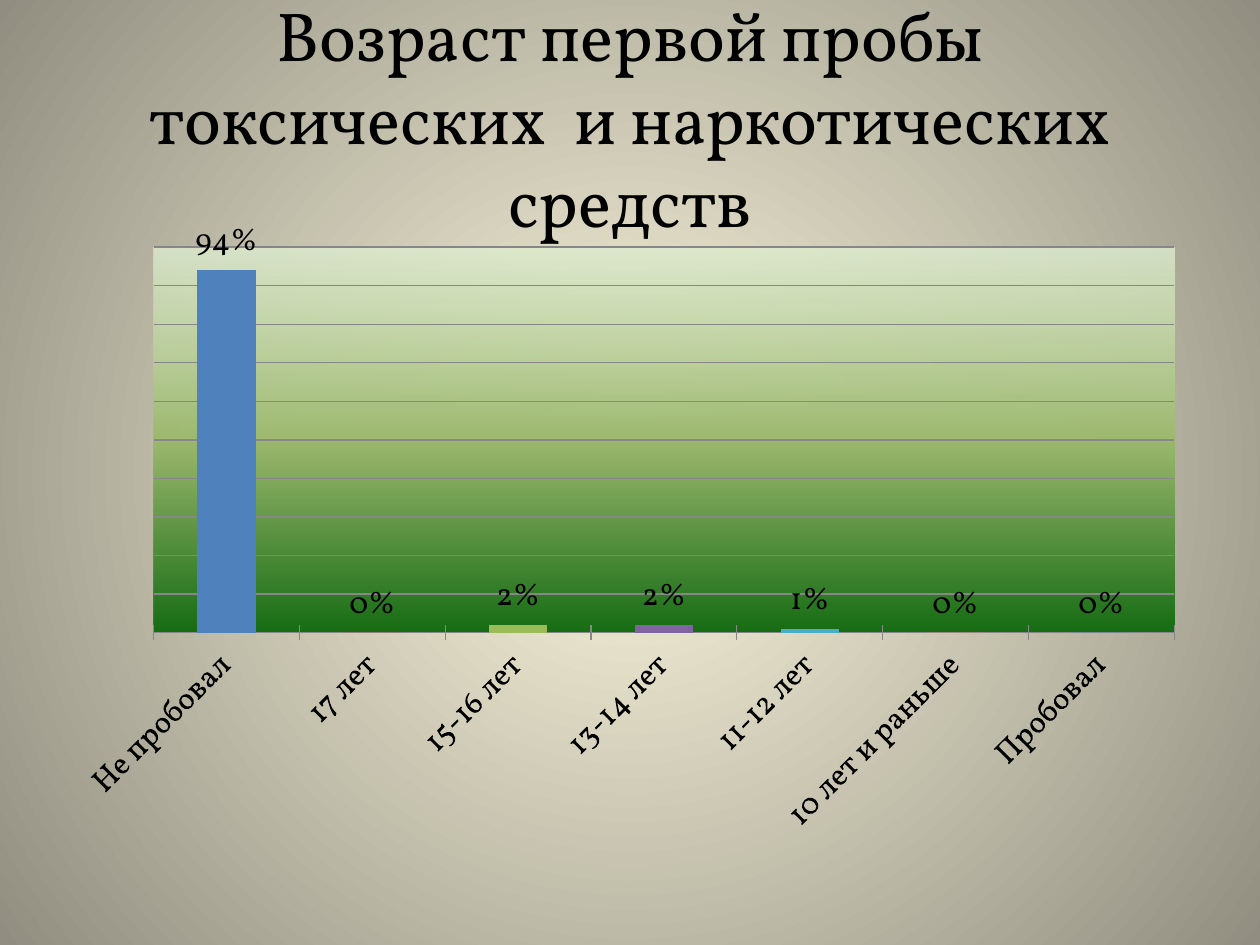
from lxml.etree import fromstring
from pptx import Presentation
from pptx.chart.data import CategoryChartData as ChartData
from pptx.dml.color import RGBColor
from pptx.enum.chart import XL_CHART_TYPE as Kind, XL_LABEL_POSITION as Pos, XL_TICK_MARK as Tick
from pptx.enum.text import MSO_ANCHOR as Anchor, MSO_AUTO_SIZE as Auto, PP_ALIGN as Align
from pptx.oxml.ns import nsdecls
from pptx.util import Cm, Pt

FACE = "Vollkorn"
GREY = "878787"
rgb = RGBColor.from_string


def put(frame, text, size=18, color="000000", face=FACE, align=Align.CENTER):
    para = frame.paragraphs[0]
    para.alignment = align
    run = para.add_run()
    run.text = text
    run.font.size = Pt(size)
    run.font.name = face
    run.font.color.rgb = rgb(color)


def grad(stops, shade):
    """Return a gradFill element; stops are (percent, colour, opacity percent)."""
    marks = "".join(
        f'<a:gs pos="{at * 1000}"><a:srgbClr val="{color}">'
        f'<a:alpha val="{alpha * 1000}"/></a:srgbClr></a:gs>'
        for at, color, alpha in stops)
    return fromstring(f'<a:gradFill {nsdecls("a")} rotWithShape="1">'
                      f'<a:gsLst>{marks}</a:gsLst>{shade}</a:gradFill>')


deck = Presentation()
deck.slide_width, deck.slide_height = Cm(25.4), Cm(19.05)
slide = deck.slides.add_slide(deck.slide_layouts[5])

# Background
slide.background.fill.solid()
back = slide._element.cSld.bg.bgPr
back.replace(back[0], grad(
    [(0, "FCF7DD", 100), (100, "918E81", 100)],
    '<a:path path="circle"><a:fillToRect l="50000" t="50000" r="50000" b="50000"/></a:path>'))

# Title
title = slide.shapes.title
title.left, title.top, title.width, title.height = Cm(1.27), Cm(0.76), Cm(22.86), Cm(3.18)
frame = title.text_frame
frame.word_wrap = True
frame.auto_size = Auto.NONE
frame.vertical_anchor = Anchor.MIDDLE
put(frame, "Возраст первой пробы токсических  и наркотических средств", size=39.6)

# Chart
ages = [
    ("Не пробовал", 0.94, "4F81BD"),
    ("17 лет", 0, "C0504D"),
    ("15-16 лет", 0.02, "9BBB59"),
    ("13-14 лет", 0.02, "8064A2"),
    ("11-12 лет", 0.01, "4BACC6"),
    ("10 лет и раньше", 0, "F79646"),
    ("Пробовал", 0, "4F81BD"),
]
data = ChartData(number_format="0%")
data.categories = [name for name, _, _ in ages]
data.add_series("Series 1", [share for _, share, _ in ages])
chart = slide.shapes.add_chart(Kind.COLUMN_CLUSTERED, Cm(1.27), Cm(4.45),
                               Cm(22.86), Cm(12.57), data).chart
chart.has_legend = False
chart.has_title = False
chart.font.size = Pt(18)
chart.font.name = FACE
chart.font.color.rgb = rgb("000000")

# Columns and labels
plot = chart.plots[0]
plot.vary_by_categories = False
plot.gap_width = 150
bars = plot.series[0]
for i, (_, _, color) in enumerate(ages):
    fill = bars.points[i].format.fill
    fill.solid()
    fill.fore_color.rgb = rgb(color)
plot.has_data_labels = True
labels = plot.data_labels
labels.show_value = True
labels.number_format = "0%"
labels.number_format_is_linked = False
labels.position = Pos.OUTSIDE_END

# Axes
steps = chart.value_axis
steps.minimum_scale, steps.maximum_scale, steps.major_unit = 0, 1, 0.1
steps.visible = False
steps.has_major_gridlines = True
names = chart.category_axis
names.major_tick_mark = Tick.CROSS
names.tick_labels.font.size = Pt(18)
names._element.txPr.bodyPr.set("rot", "-2700000")
for line in (steps.major_gridlines.format.line, names.format.line):
    line.color.rgb = rgb(GREY)
    line.width = Pt(0.75)

# Plot area: place and gradient
area = chart._chartSpace.chart.plotArea
for old in area.findall("{*}layout"):
    area.remove(old)
place = "".join(f'<c:{key} val="{val}"/>' for key, val in [
    ("layoutTarget", "inner"), ("xMode", "edge"), ("yMode", "edge"),
    ("x", 0.08), ("y", 0.04), ("w", 0.9), ("h", 0.62)])
area.insert(0, fromstring(
    f'<c:layout {nsdecls("c")}><c:manualLayout>{place}</c:manualLayout></c:layout>'))
look = fromstring(f'<c:spPr {nsdecls("c", "a")}><a:ln><a:noFill/></a:ln></c:spPr>')
look.insert(0, grad([(0, "DDEBCF", 80), (50, "9CB86E", 100), (100, "156B13", 100)],
                    '<a:lin ang="5400000" scaled="0"/>'))
area.append(look)

deck.save("out.pptx")
